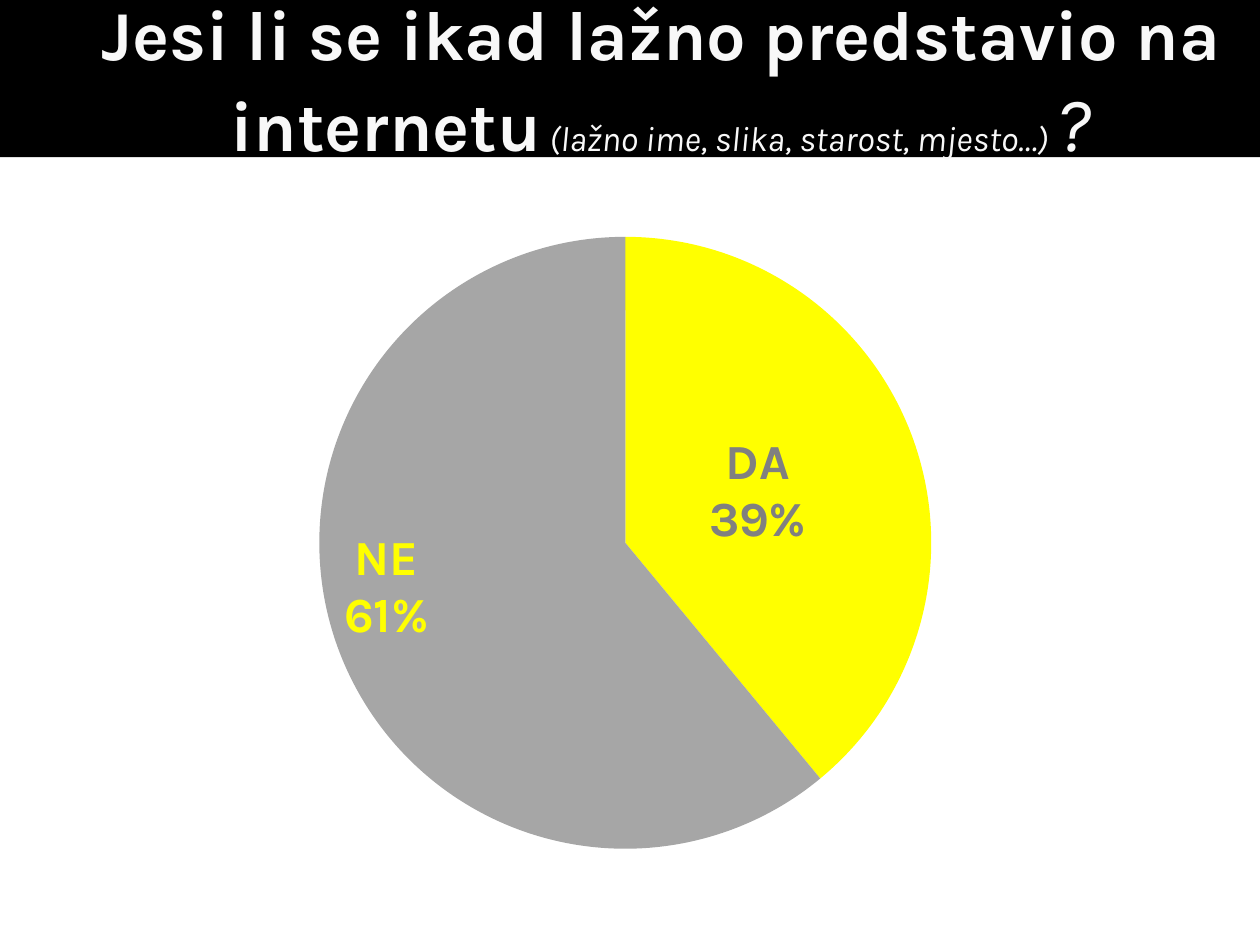
from lxml import etree
from pptx import Presentation
from pptx.chart.data import CategoryChartData
from pptx.dml.color import RGBColor
from pptx.enum.chart import XL_CHART_TYPE, XL_LABEL_POSITION
from pptx.enum.shapes import MSO_SHAPE
from pptx.enum.text import MSO_ANCHOR, PP_ALIGN
from pptx.oxml.ns import qn
from pptx.util import Cm, Pt

RECTANGLE = MSO_SHAPE.RECTANGLE
PIE = XL_CHART_TYPE.PIE
INSIDE_END = XL_LABEL_POSITION.INSIDE_END
MIDDLE = MSO_ANCHOR.MIDDLE
CENTER = PP_ALIGN.CENTER

COLORS = {
    "black": "000000",
    "title": "F8F8F8",
    "yellow": "FFFF00",
    "gray": "A6A6A6",
    "dark_gray": "808080",
}


def manual_layout(**settings):
    """Return a c:layout element; lengths are fractions of the chart area."""
    layout = etree.Element(qn("c:layout"))
    manual = etree.SubElement(layout, qn("c:manualLayout"))
    for name, value in settings.items():
        etree.SubElement(manual, qn(f"c:{name}")).set("val", str(value))
    return layout


class SlideBuilder:
    font_name = "Karla"

    def __init__(self, slide):
        self.slide = slide

    def style_font(self, font, size, color, bold=False, italic=False):
        font.name = self.font_name
        font.size = Pt(size)
        font.bold = bold
        font.italic = italic
        font.color.rgb = RGBColor.from_string(COLORS[color])

    def fill(self, fill, color):
        fill.solid()
        fill.fore_color.rgb = RGBColor.from_string(COLORS[color])

    def title_band(self, left, top, width, height, indent, runs):
        shape = self.slide.shapes.add_shape(RECTANGLE, left, top, width, height)
        shape.shadow.inherit = False
        self.fill(shape.fill, "black")
        shape.line.fill.background()
        frame = shape.text_frame
        frame.word_wrap = True
        frame.vertical_anchor = MIDDLE
        paragraph = frame.paragraphs[0]
        paragraph.alignment = CENTER
        properties = paragraph._p.get_or_add_pPr()
        properties.set("marL", str(indent))
        properties.set("indent", "0")
        for text, size, bold, italic in runs:
            run = paragraph.add_run()
            run.text = text
            self.style_font(run.font, size, "title", bold, italic)

    def pie_chart(self, left, top, width, height, slices, plot_layout):
        """Each slice is (category, value, fill, label colour, label shift)."""
        data = CategoryChartData()
        data.categories = [category for category, *_ in slices]
        data.add_series("Series 1", [value for _, value, *_ in slices])
        chart = self.slide.shapes.add_chart(PIE, left, top, width, height, data).chart
        chart.has_legend = False
        chart.has_title = False
        self.style_font(chart.font, 18, "black")
        plot = chart.plots[0]
        plot.vary_by_categories = True
        for old_layout in chart.element.xpath(".//c:plotArea/c:layout"):
            old_layout.getparent().remove(old_layout)
        chart.element.xpath(".//c:plotArea")[0].insert(0, plot_layout)

        for index, (_, _, color, label_color, _) in enumerate(slices):
            point = plot.series[0].points[index]
            self.fill(point.format.fill, color)
            point.format.line.fill.background()
            self.style_font(point.data_label.font, 28, label_color, bold=True)
            point.data_label.position = INSIDE_END

        shown = {"showVal": 0, "showCatName": 1, "showPercent": 1}
        for label, (*_, shift) in zip(chart.element.xpath(".//c:dLbl"), slices):
            for name, value in shown.items():
                label.find(qn(f"c:{name}")).set("val", str(value))
            etree.SubElement(label, qn("c:separator")).text = "\n"
            if shift:
                label.insert(1, manual_layout(x=shift[0], y=shift[1]))


def main():
    presentation = Presentation()
    presentation.slide_width = Cm(25.4)
    presentation.slide_height = Cm(19.05)
    slide = presentation.slides.add_slide(presentation.slide_layouts[6])
    builder = SlideBuilder(slide)

    builder.title_band(
        Cm(0), Cm(0), presentation.slide_width, Cm(3.17), Cm(1.25),
        [
            ("Jesi li se ikad lažno predstavio na internetu", 40, True, False),
            (" (lažno ime, slika, starost, mjesto…) ", 20, False, True),
            ("?", 44, False, True),
        ],
    )
    builder.pie_chart(
        Cm(2.4), Cm(3.97), Cm(22.43), Cm(13.41),
        [
            ("DA", 39, "yellow", "dark_gray", (-0.09, -0.01)),
            ("NE", 61, "gray", "yellow", None),
        ],
        manual_layout(layoutTarget="inner", xMode="edge", yMode="edge",
                      x=0.18, y=0.06, w=0.55, h=0.92),
    )
    presentation.save("out.pptx")


if __name__ == "__main__":
    main()
